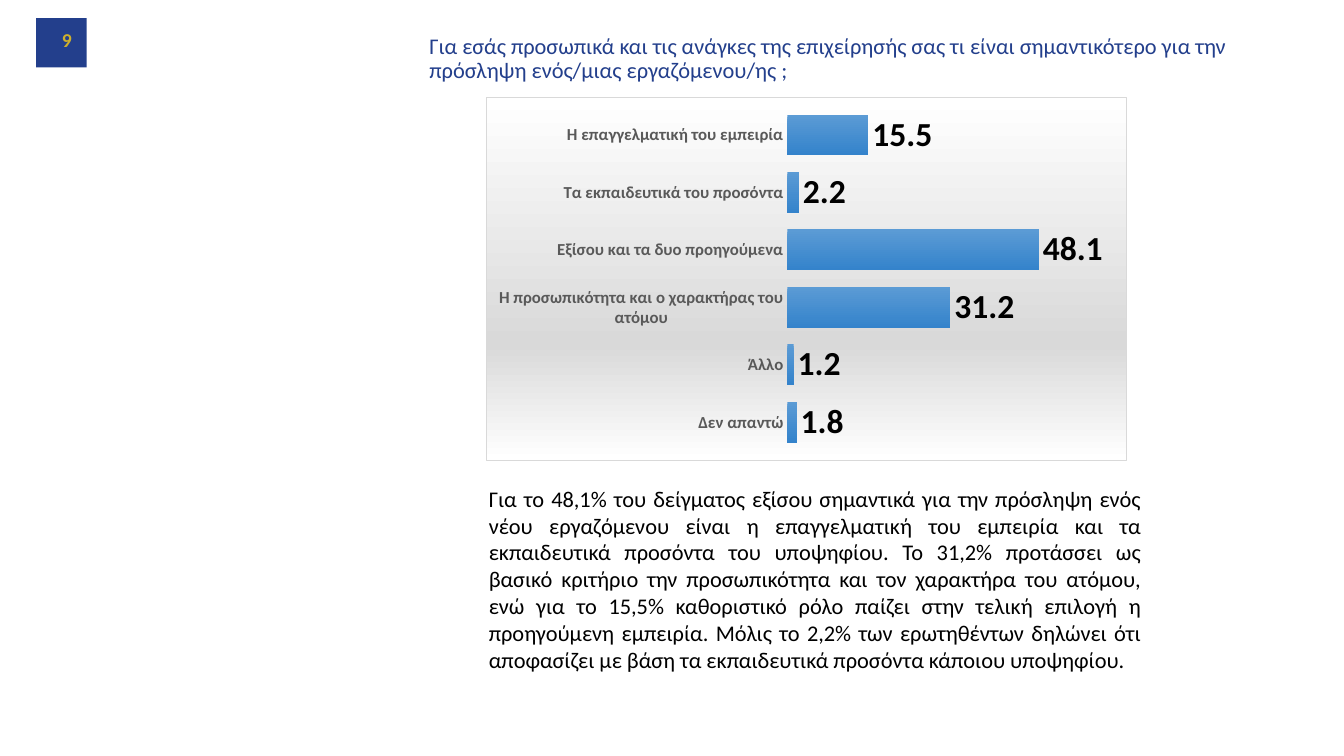
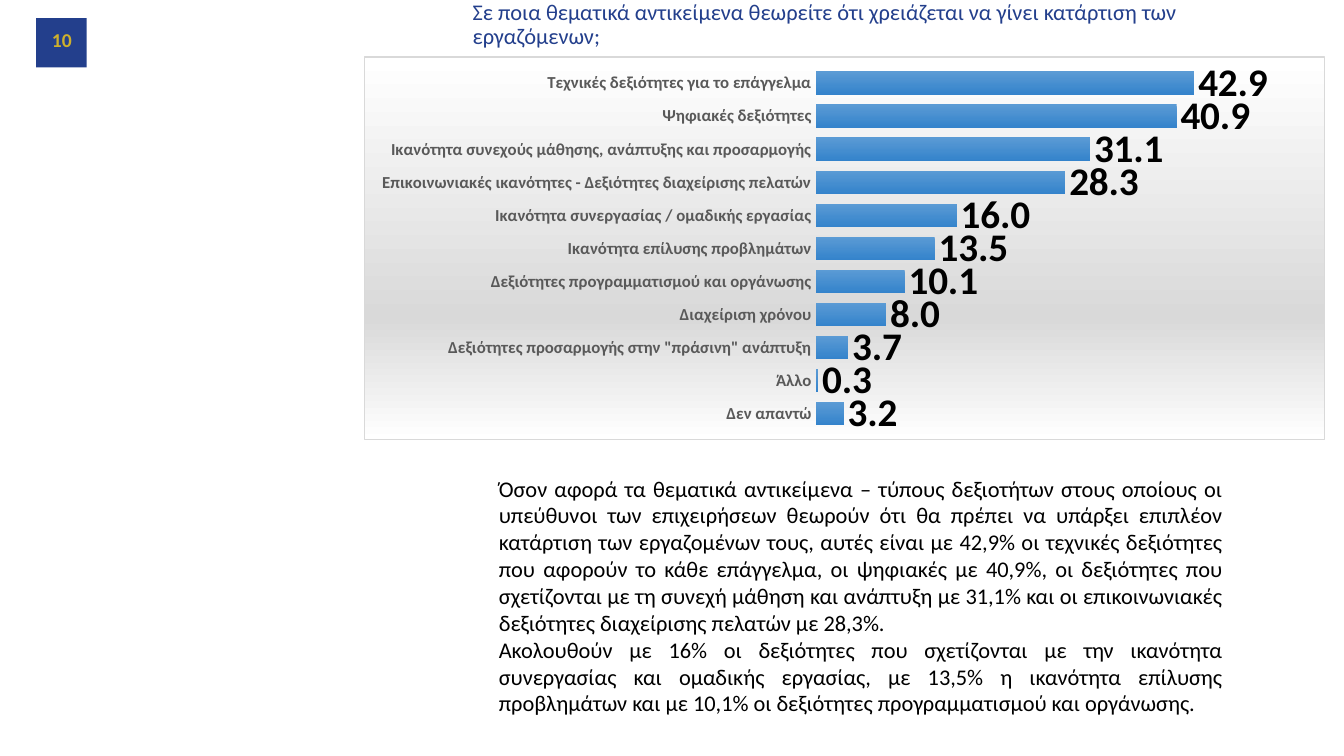
from dataclasses import dataclass

from lxml import etree
from pptx import Presentation
from pptx.chart.data import CategoryChartData
from pptx.dml.color import RGBColor
from pptx.enum.chart import XL_CHART_TYPE as ChartType, XL_LABEL_POSITION as LabelPos
from pptx.enum.chart import XL_TICK_MARK as TickMark
from pptx.enum.shapes import MSO_SHAPE as Shape
from pptx.enum.text import MSO_ANCHOR as Anchor, MSO_AUTO_SIZE as AutoSize, PP_ALIGN as Align
from pptx.oxml import parse_xml
from pptx.util import Inches, Pt

CHART_NS = "http://schemas.openxmlformats.org/drawingml/2006/chart"
DRAW_NS = "http://schemas.openxmlformats.org/drawingml/2006/main"


@dataclass(frozen=True)
class Theme:
    font: str = "Calibri"
    navy: str = "233F8C"
    gold: str = "CEB02C"
    ink: str = "000000"
    label_grey: str = "595959"
    border: str = "D9D9D9"
    bar_stops: tuple = ("5B9BD5", "3483CB")
    panel_stops: tuple = ((0, "FFFFFF"), (68, "D9D9D9"), (100, "FFFFFF"))
    text_size: int = 16
    number_size: int = 14
    category_size: int = 12


class SurveyDeck:
    """Holds the style and current page; boxes are percentages of the slide."""

    title_size = (61.22, 10.13)
    badge_box = (2.7, 2.4, 3.75, 6.53)
    number_box = (2.85, 2.53, 3.23, 5.33)

    def __init__(self, theme):
        self.theme = theme
        self.deck = Presentation()
        self.deck.slide_width, self.deck.slide_height = Inches(13.33), Inches(7.5)
        self.page = None

    def place(self, box):
        sides = (self.deck.slide_width, self.deck.slide_height) * 2
        return [round(side * share / 100) for side, share in zip(sides, box)]

    def style(self, font, size, color, bold=False):
        font.name, font.size, font.bold = self.theme.font, Pt(size), bold
        font.color.rgb = RGBColor.from_string(color)

    def text(self, box, paragraphs, size, color, bold=False, align=Align.LEFT,
             anchor=Anchor.TOP, spacing=None, grow=False):
        frame = self.page.shapes.add_textbox(*self.place(box)).text_frame
        frame.word_wrap = True
        frame.vertical_anchor = anchor
        frame.auto_size = AutoSize.SHAPE_TO_FIT_TEXT if grow else AutoSize.NONE
        for index, words in enumerate(paragraphs):
            para = frame.add_paragraph() if index else frame.paragraphs[0]
            para.alignment = align
            para.line_spacing = spacing
            span = para.add_run()
            span.text = words
            self.style(span.font, size, color, bold)

    def new_page(self, number):
        theme = self.theme
        self.page = self.deck.slides.add_slide(self.deck.slide_layouts[6])
        badge = self.page.shapes.add_shape(Shape.RECTANGLE, *self.place(self.badge_box))
        badge.shadow.inherit = False
        badge.fill.solid()
        badge.fill.fore_color.rgb = RGBColor.from_string(theme.navy)
        badge.line.fill.background()
        self.text(self.number_box, [str(number)], theme.number_size, theme.gold,
                  bold=True, align=Align.RIGHT, anchor=Anchor.MIDDLE)

    def title(self, corner, question):
        self.text(corner + self.title_size, [question], self.theme.text_size,
                  self.theme.navy, anchor=Anchor.BOTTOM, spacing=0.9)

    def comment(self, box, *paragraphs):
        self.text(box, paragraphs, self.theme.text_size, self.theme.ink,
                  align=Align.JUSTIFY, grow=True)

    def bar_chart(self, box, answers, plot_width, axis_max, value_size):
        theme = self.theme
        data = CategoryChartData(number_format="0.0")
        data.categories = [answer for answer, _ in reversed(answers)]
        data.add_series("Series 1", [value for _, value in reversed(answers)])
        chart = self.page.shapes.add_chart(
            ChartType.BAR_CLUSTERED, *self.place(box), data).chart
        chart.has_title = chart.has_legend = False
        self.style(chart.font, 10, theme.ink)

        # Axes
        categories, values = chart.category_axis, chart.value_axis
        categories.major_tick_mark = categories.minor_tick_mark = TickMark.NONE
        categories.format.line.fill.background()
        self.style(categories.tick_labels.font, theme.category_size, theme.label_grey, True)
        values.has_major_gridlines = False
        values.minimum_scale, values.maximum_scale = 0, axis_max
        values.visible = False

        # Bars and their values
        plot = chart.plots[0]
        plot.gap_width = 41
        plot.vary_by_categories = False
        fill = plot.series[0].format.fill
        fill.gradient()
        fill.gradient_angle = 270
        for stop, color in zip(fill.gradient_stops, theme.bar_stops):
            stop.color.rgb = RGBColor.from_string(color)
        plot.has_data_labels = True
        labels = plot.data_labels
        labels.show_value = True
        labels.position = LabelPos.OUTSIDE_END
        labels.number_format, labels.number_format_is_linked = "0.0", False
        self.style(labels.font, value_size, theme.ink, True)

        self.chart_panel(chart)
        self.plot_layout(chart, (0.47, 0.025, plot_width, 0.95))

    def chart_panel(self, chart):
        """Gradient background and thin border of the chart."""
        stops = "".join(f'<a:gs pos="{place * 1000}"><a:srgbClr val="{color}"/></a:gs>'
                        for place, color in self.theme.panel_stops)
        panel = parse_xml(
            f'<c:spPr xmlns:c="{CHART_NS}" xmlns:a="{DRAW_NS}">'
            f'<a:gradFill><a:gsLst>{stops}</a:gsLst><a:lin ang="5400000" scaled="0"/></a:gradFill>'
            f'<a:ln w="{Pt(0.75)}"><a:solidFill><a:srgbClr val="{self.theme.border}"/>'
            '</a:solidFill></a:ln></c:spPr>')
        chart._chartSpace.find(f"{{{CHART_NS}}}chart").addnext(panel)

    def plot_layout(self, chart, shares):
        area = chart._chartSpace.find(f".//{{{CHART_NS}}}plotArea")
        for old in area.findall(f"{{{CHART_NS}}}layout"):
            area.remove(old)
        layout = etree.Element(f"{{{CHART_NS}}}layout")
        manual = etree.SubElement(layout, f"{{{CHART_NS}}}manualLayout")
        settings = [("layoutTarget", "inner"), ("xMode", "edge"), ("yMode", "edge")]
        for name, value in settings + list(zip("xywh", shares)):
            etree.SubElement(manual, f"{{{CHART_NS}}}{name}", val=str(value))
        area.insert(0, layout)


def main():
    survey = SurveyDeck(Theme())

    # Hiring criteria
    survey.new_page(9)
    survey.title((31.21, 1.6), "Για εσάς προσωπικά και τις ανάγκες της επιχείρησής σας τι είναι "
                 "σημαντικότερο για την πρόσληψη ενός/μιας εργαζόμενου/ης ;")
    survey.bar_chart((36.16, 12.8, 47.71, 48.13), [
        ("Η επαγγελματική του εμπειρία", 15.5),
        ("Τα εκπαιδευτικά του προσόντα", 2.2),
        ("Εξίσου και τα δυο προηγούμενα", 48.1),
        ("Η προσωπικότητα και ο χαρακτήρας του ατόμου", 31.2),
        ("Άλλο", 1.2),
        ("Δεν απαντώ", 1.8),
    ], plot_width=0.49, axis_max=60, value_size=24)
    survey.comment(
        (35.63, 63.47, 50.04, 26.53),
        "Για το 48,1% του δείγματος εξίσου σημαντικά για την πρόσληψη ενός νέου εργαζόμενου "
        "είναι η επαγγελματική του εμπειρία και τα εκπαιδευτικά προσόντα του υποψηφίου. "
        "Το 31,2% προτάσσει ως βασικό κριτήριο την προσωπικότητα και τον χαρακτήρα του ατόμου, "
        "ενώ για το 15,5% καθοριστικό ρόλο παίζει στην τελική επιλογή η προηγούμενη εμπειρία. "
        "Μόλις το 2,2% των ερωτηθέντων δηλώνει ότι αποφασίζει με βάση τα εκπαιδευτικά προσόντα "
        "κάποιου υποψηφίου.")

    # Training subjects
    survey.new_page(10)
    survey.title((34.43, -2.93), "Σε ποια θεματικά αντικείμενα θεωρείτε ότι χρειάζεται να γίνει "
                 "κατάρτιση των εργαζόμενων;")
    survey.bar_chart((27.08, 7.47, 71.49, 50.8), [
        ("Τεχνικές δεξιότητες για το επάγγελμα", 42.9),
        ("Ψηφιακές δεξιότητες", 40.9),
        ("Ικανότητα συνεχούς μάθησης, ανάπτυξης και προσαρμογής", 31.1),
        ("Επικοινωνιακές ικανότητες - Δεξιότητες διαχείρισης πελατών", 28.3),
        ("Ικανότητα συνεργασίας / ομαδικής εργασίας", 16),
        ("Ικανότητα επίλυσης προβλημάτων", 13.5),
        ("Δεξιότητες προγραμματισμού και οργάνωσης", 10.1),
        ("Διαχείριση χρόνου", 8),
        ('Δεξιότητες προσαρμογής στην "πράσινη" ανάπτυξη', 3.7),
        ("Άλλο", 0.3),
        ("Δεν απαντώ", 3.2),
    ], plot_width=0.46, axis_max=50, value_size=28)
    survey.comment(
        (36.38, 62.13, 55.36, 33.6),
        "Όσον αφορά τα θεματικά αντικείμενα – τύπους δεξιοτήτων στους οποίους οι υπεύθυνοι των "
        "επιχειρήσεων θεωρούν ότι θα πρέπει να υπάρξει επιπλέον κατάρτιση των εργαζομένων τους, "
        "αυτές είναι με 42,9% οι τεχνικές δεξιότητες που αφορούν το κάθε επάγγελμα, οι ψηφιακές "
        "με 40,9%, οι δεξιότητες που σχετίζονται με τη συνεχή μάθηση και ανάπτυξη με 31,1% και "
        "οι επικοινωνιακές δεξιότητες διαχείρισης πελατών με 28,3%.",
        "Ακολουθούν με 16% οι δεξιότητες που σχετίζονται με την ικανότητα συνεργασίας και "
        "ομαδικής εργασίας, με 13,5% η ικανότητα επίλυσης προβλημάτων και με 10,1% οι δεξιότητες "
        "προγραμματισμού και οργάνωσης.")

    survey.deck.save("out.pptx")


if __name__ == "__main__":
    main()
